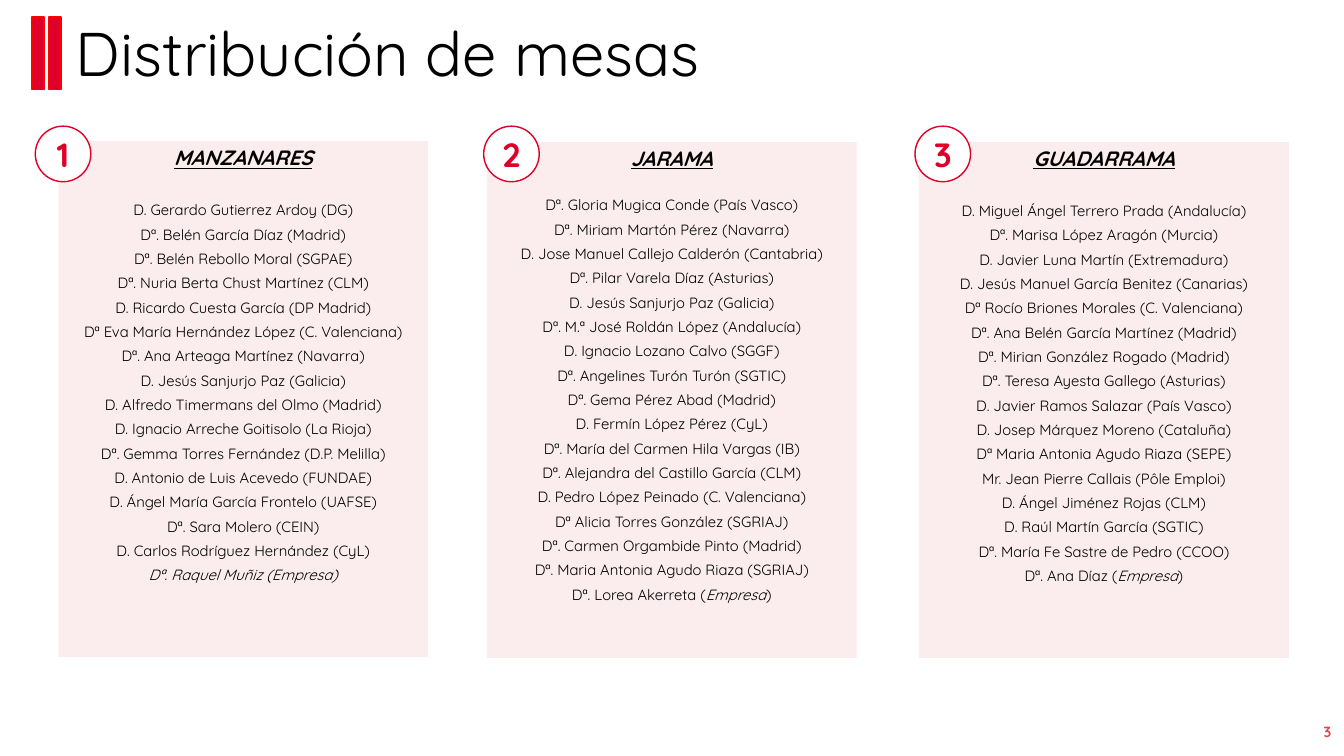
import pptx
import pptx.util
import pptx.dml.color
import pptx.enum.shapes
import pptx.enum.text
import pptx.oxml.ns
from lxml import etree

Cm = pptx.util.Cm
Pt = pptx.util.Pt
RGBColor = pptx.dml.color.RGBColor
MSO_SHAPE = pptx.enum.shapes.MSO_SHAPE
MSO_ANCHOR = pptx.enum.text.MSO_ANCHOR
PP_ALIGN = pptx.enum.text.PP_ALIGN

FONT = "Quicksand"
RED = RGBColor(0xDE, 0x00, 0x29)
BAR_EDGE = RGBColor(0xFF, 0x00, 0x00)
NUMBER_RED = RGBColor(0xE6, 0x41, 0x4C)
PINK = RGBColor(0xF1, 0xBD, 0xC1)
WHITE = RGBColor(0xFF, 0xFF, 0xFF)
BLACK = RGBColor(0x00, 0x00, 0x00)

TITLE = "Distribución de mesas"
PAGE_NUMBER = "3"

TABLES = [
    {
        "name": "MANZANARES", "card": (1.47, 3.56), "badge_left": 0.89, "heading_gap": 22.1,
        "people": [
            "D. Gerardo Gutierrez Ardoy (DG)",
            "Dª. Belén García Díaz (Madrid)",
            "Dª. Belén Rebollo Moral (SGPAE)",
            "Dª. Nuria Berta Chust Martínez (CLM)",
            "D. Ricardo Cuesta García (DP Madrid)",
            "Dª Eva María Hernández López (C. Valenciana)",
            "Dª. Ana Arteaga Martínez (Navarra)",
            "D. Jesús Sanjurjo Paz (Galicia)",
            "D. Alfredo Timermans del Olmo (Madrid)",
            "D. Ignacio Arreche Goitisolo (La Rioja)",
            "Dª. Gemma Torres Fernández (D.P. Melilla)",
            "D. Antonio de Luis Acevedo (FUNDAE)",
            "D. Ángel María García Frontelo (UAFSE)",
            "Dª. Sara Molero (CEIN)",
            "D. Carlos Rodríguez Hernández (CyL)",
        ],
        "last_person": [("Dª. Raquel Muñiz (Empresa)", True)],
    },
    {
        "name": "JARAMA", "card": (12.27, 3.58), "badge_left": 12.19, "heading_gap": 18,
        "people": [
            "Dª. Gloria Mugica Conde (País Vasco)",
            "Dª. Miriam Martón Pérez (Navarra)",
            "D. Jose Manuel Callejo Calderón (Cantabria)",
            "Dª. Pilar Varela Díaz (Asturias)",
            "D. Jesús Sanjurjo Paz (Galicia)",
            "Dª. M.ª José Roldán López (Andalucía)",
            "D. Ignacio Lozano Calvo (SGGF)",
            "Dª. Angelines Turón Turón (SGTIC)",
            "Dª. Gema Pérez Abad (Madrid)",
            "D. Fermín López Pérez (CyL)",
            "Dª. María del Carmen Hila Vargas (IB)",
            "Dª. Alejandra del Castillo García (CLM)",
            "D. Pedro López Peinado (C. Valenciana)",
            "Dª Alicia Torres González (SGRIAJ)",
            "Dª. Carmen Orgambide Pinto (Madrid)",
            "Dª. Maria Antonia Agudo Riaza (SGRIAJ)",
        ],
        "last_person": [("Dª. Lorea Akerreta (", False), ("Empresa", True), (")", False)],
    },
    {
        "name": "GUADARRAMA", "card": (23.16, 3.58), "badge_left": 23.06, "heading_gap": 22.1,
        "people": [
            "D. Miguel Ángel Terrero Prada (Andalucía)",
            "Dª. Marisa López Aragón (Murcia)",
            "D. Javier Luna Martín (Extremadura)",
            "D. Jesús Manuel García Benitez (Canarias)",
            "Dª Rocío Briones Morales (C. Valenciana)",
            "Dª. Ana Belén García Martínez (Madrid)",
            "Dª. Mirian González Rogado (Madrid)",
            "Dª. Teresa Ayesta Gallego (Asturias)",
            "D. Javier Ramos Salazar (País Vasco)",
            "D. Josep Márquez Moreno (Cataluña)",
            "Dª Maria Antonia Agudo Riaza (SEPE)",
            "Mr. Jean Pierre Callais (Pôle Emploi)",
            "D. Ángel Jiménez Rojas (CLM)",
            "D. Raúl Martín García (SGTIC)",
            "Dª. María Fe Sastre de Pedro (CCOO)",
        ],
        "last_person": [("Dª. Ana Díaz (", False), ("Empresa", True), (")", False)],
    },
]

CARD_WIDTH, CARD_HEIGHT = 9.32, 13
BADGE_TOP, BADGE_SIZE = 3.18, 1.4
BAR_LEFT, BAR_STEP = 0.81, 0.43
PERSON_GAP = 4.65


def add_filled_shape(shapes, kind, left, top, width, height, fill, line=None):
    shape = shapes.add_shape(kind, Cm(left), Cm(top), Cm(width), Cm(height))
    shape.shadow.inherit = False
    shape.fill.solid()
    shape.fill.fore_color.rgb = fill
    if line is None:
        shape.line.fill.background()
    else:
        shape.line.color.rgb = line
        shape.line.width = Pt(1)
    return shape


def set_insets(text_frame, side, top, bottom):
    text_frame.margin_left = text_frame.margin_right = Cm(side)
    text_frame.margin_top, text_frame.margin_bottom = Cm(top), Cm(bottom)


def style_paragraph(paragraph, size, color, align, bold=False):
    paragraph.alignment = align
    for run in paragraph.runs:
        run.font.name = FONT
        run.font.size = Pt(size)
        run.font.color.rgb = color
        run.font.bold = bold


def add_card(shapes, table):
    card = add_filled_shape(shapes, MSO_SHAPE.RECTANGLE, *table["card"], CARD_WIDTH, CARD_HEIGHT, PINK)
    color = card.fill._xPr.find(".//" + pptx.oxml.ns.qn("a:srgbClr"))
    etree.SubElement(color, pptx.oxml.ns.qn("a:alpha"), val="27000")
    text_frame = card.text_frame
    text_frame.word_wrap = True
    text_frame.vertical_anchor = MSO_ANCHOR.TOP
    set_insets(text_frame, 0.1, 0.1, 0.05)

    heading = text_frame.paragraphs[0]
    heading.text = table["name"]
    heading.space_after = Pt(table["heading_gap"])
    style_paragraph(heading, 14.8, BLACK, PP_ALIGN.CENTER, bold=True)
    heading.runs[0].font.italic = True
    heading.runs[0].font.underline = True

    for person in table["people"]:
        paragraph = text_frame.add_paragraph()
        paragraph.text = person
        paragraph.space_after = Pt(PERSON_GAP)
        style_paragraph(paragraph, 10.6, BLACK, PP_ALIGN.CENTER)

    paragraph = text_frame.add_paragraph()
    for text, italic in table["last_person"]:
        run = paragraph.add_run()
        run.text = text
        run.font.italic = italic
    style_paragraph(paragraph, 10.6, BLACK, PP_ALIGN.CENTER)


def add_badge(shapes, left, number):
    badge = add_filled_shape(shapes, MSO_SHAPE.OVAL, left, BADGE_TOP, BADGE_SIZE, BADGE_SIZE, WHITE, RED)
    text_frame = badge.text_frame
    text_frame.text = str(number)
    text_frame.vertical_anchor = MSO_ANCHOR.MIDDLE
    set_insets(text_frame, 0, 0, 0)
    style_paragraph(text_frame.paragraphs[0], 24, RED, PP_ALIGN.CENTER, bold=True)


def main():
    presentation = pptx.Presentation()
    presentation.slide_width, presentation.slide_height = Cm(33.87), Cm(19.05)
    slide = presentation.slides.add_slide(presentation.slide_layouts.get_by_name("Title Only"))

    for index in range(2):
        add_filled_shape(slide.shapes, MSO_SHAPE.RECTANGLE, BAR_LEFT + index * BAR_STEP, 0.43,
                         0.3, 1.83, RED, BAR_EDGE)

    title = slide.shapes.title
    title.left, title.top, title.width, title.height = Cm(1.91), Cm(0.43), Cm(20.42), Cm(1.83)
    title.text_frame.text = TITLE
    title.text_frame.auto_size = pptx.enum.text.MSO_AUTO_SIZE.NONE
    title.text_frame.vertical_anchor = MSO_ANCHOR.BOTTOM
    set_insets(title.text_frame, 0, 0, 0)
    title.text_frame.paragraphs[0].line_spacing = 0.9
    style_paragraph(title.text_frame.paragraphs[0], 44, BLACK, PP_ALIGN.LEFT)

    for number, table in enumerate(TABLES, start=1):
        group = slide.shapes.add_group_shape()
        add_card(group.shapes, table)
        add_badge(group.shapes, table["badge_left"], number)

    page_number = slide.shapes.add_textbox(Cm(32.33), Cm(17.93), Cm(1.47), Cm(1.02))
    page_number.text_frame.text = PAGE_NUMBER
    page_number.text_frame.word_wrap = True
    page_number.text_frame.vertical_anchor = MSO_ANCHOR.MIDDLE
    set_insets(page_number.text_frame, 0.25, 0.13, 0.13)
    style_paragraph(page_number.text_frame.paragraphs[0], 10.5, NUMBER_RED, PP_ALIGN.RIGHT, bold=True)

    presentation.save("out.pptx")


if __name__ == "__main__":
    main()
